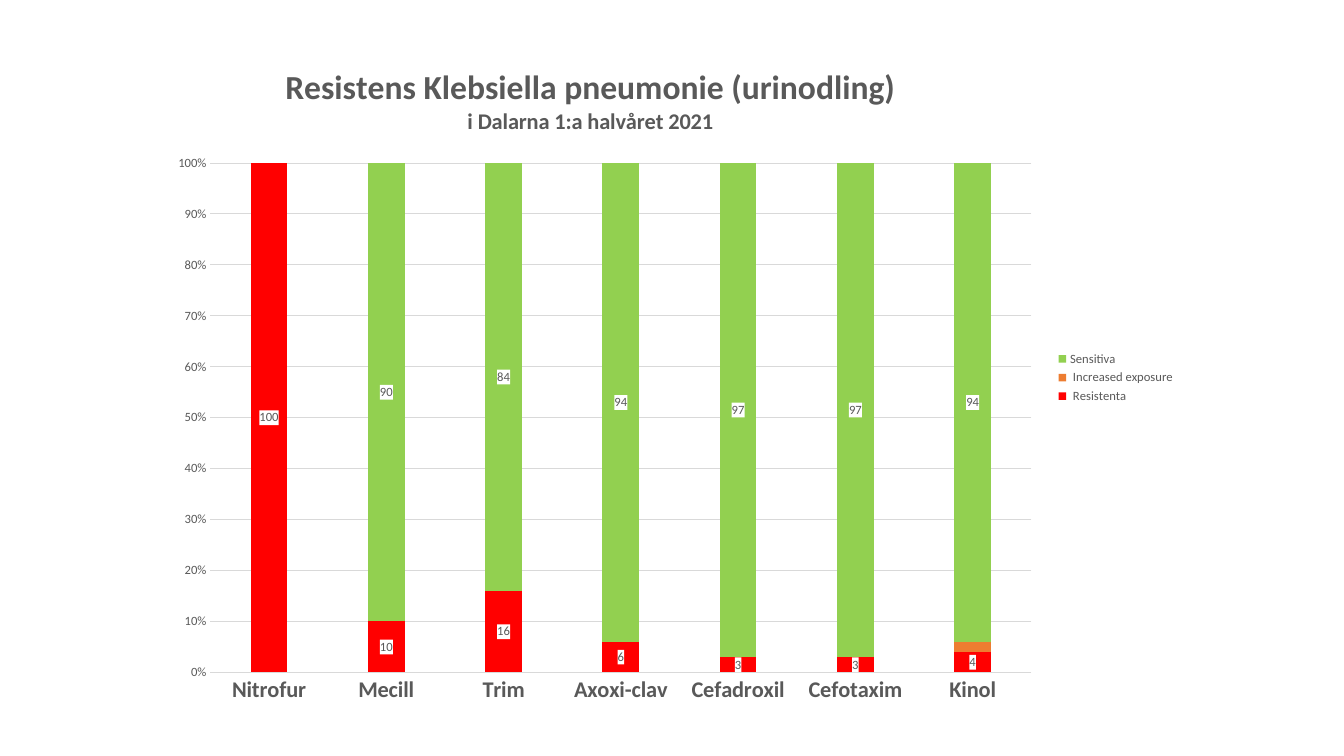
from lxml.etree import SubElement
from pptx import Presentation
from pptx.chart.data import CategoryChartData
from pptx.dml.color import RGBColor
from pptx.enum.chart import XL_CHART_TYPE, XL_LEGEND_POSITION, XL_TICK_MARK
from pptx.oxml import parse_xml
from pptx.oxml.ns import nsdecls, qn
from pptx.util import Cm, Pt

GREY = "595959"
LINE_GREY = "D9D9D9"


def color(hex_value):
    return RGBColor.from_string(hex_value)


def place(parent, index, **fractions):
    """Give a chart part a manual layout in fractions of the chart size."""
    for old_layout in parent.findall(qn("c:layout")):
        parent.remove(old_layout)
    layout = parse_xml(f"<c:layout {nsdecls('c')}><c:manualLayout/></c:layout>")
    manual = layout[0]
    if "w" in fractions:
        SubElement(manual, qn("c:layoutTarget")).set("val", "inner")
    for mode in ("xMode", "yMode"):
        SubElement(manual, qn(f"c:{mode}")).set("val", "edge")
    for name, value in fractions.items():
        SubElement(manual, qn(f"c:{name}")).set("val", str(value))
    parent.insert(index, layout)


presentation = Presentation()
presentation.slide_width = Cm(33.87)
presentation.slide_height = Cm(19.05)
slide = presentation.slides.add_slide(presentation.slide_layouts[6])

# Resistance data, from the bottom of the stack to the top
series_values = {
    " Resistenta": ("FF0000", [100, 10, 16, 6, 3, 3, 4]),
    " Increased exposure": ("ED7D31", [0, 0, 0, 0, 0, 0, 2]),
    "Sensitiva ": ("92D050", [0, 90, 84, 94, 97, 97, 94]),
}
chart_data = CategoryChartData()
chart_data.categories = ["Nitrofur", "Mecill", "Trim", "Axoxi-clav",
                         "Cefadroxil", "Cefotaxim", "Kinol"]
for name, (fill, values) in series_values.items():
    chart_data.add_series(name, values)

# Chart
chart = slide.shapes.add_chart(
    XL_CHART_TYPE.COLUMN_STACKED_100,
    Cm(4.01), Cm(1.07), Cm(25.86), Cm(16.89), chart_data).chart
chart.font.name = "Calibri"
chart.font.size = Pt(10)
plot = chart.plots[0]
plot.gap_width = 219
plot.overlap = 100
plot.vary_by_categories = False
place(plot._element.getparent(), 0, x=0.05, y=0.18, w=0.8, h=0.76)

# Title
title_frame = chart.chart_title.text_frame
title_lines = [("Resistens Klebsiella pneumonie (urinodling)", 24),
               ("i Dalarna 1:a halvåret 2021", 16)]
title_fonts = []
for number, (text, size) in enumerate(title_lines):
    paragraph = title_frame.add_paragraph() if number else title_frame.paragraphs[0]
    run = paragraph.add_run()
    run.text = text
    title_fonts.append((run.font, size, True))
chart.chart_title.include_in_layout = False
place(chart.chart_title._element, 1, x=0.12, y=0.03)

# Axes
category_axis = chart.category_axis
value_axis = chart.value_axis
for axis in (category_axis, value_axis):
    axis.major_tick_mark = XL_TICK_MARK.NONE
    axis.minor_tick_mark = XL_TICK_MARK.NONE
value_axis.minimum_scale = 0
value_axis.maximum_scale = 1
value_axis.major_unit = 0.1
value_axis.tick_labels.number_format = "0%"
value_axis.tick_labels.number_format_is_linked = False
value_axis.format.line.fill.background()
for line in (category_axis.format.line, value_axis.major_gridlines.format.line):
    line.color.rgb = color(LINE_GREY)
    line.width = Pt(0.75)

# Legend
chart.has_legend = True
chart.legend.position = XL_LEGEND_POSITION.RIGHT
chart.legend.include_in_layout = False

# Series colours and value labels on white
label_fonts = []
for series in plot.series:
    series.format.fill.solid()
    series.format.fill.fore_color.rgb = color(series_values[series.name][0])
    if series.name == " Increased exposure":
        continue
    labels = series.data_labels
    labels.show_value = True
    label_fonts.append((labels.font, 9, False))
    labels._element.find(qn("c:txPr")).addprevious(parse_xml(
        f'<c:spPr {nsdecls("c", "a")}><a:solidFill><a:srgbClr val="FFFFFF"/>'
        '</a:solidFill></c:spPr>'))
    if series.values[0] == 0:
        labels._element.insert(0, parse_xml(
            f'<c:dLbl {nsdecls("c")}><c:idx val="0"/><c:delete val="1"/></c:dLbl>'))

# Fonts
fonts = title_fonts + label_fonts + [
    (category_axis.tick_labels.font, 16, True),
    (value_axis.tick_labels.font, 9, False),
    (chart.legend.font, 9, False),
]
for font, size, bold in fonts:
    for attribute, value in {"name": "Calibri", "size": Pt(size), "bold": bold}.items():
        setattr(font, attribute, value)
    font.fill.solid()
    font.fill.fore_color.rgb = color(GREY)

presentation.save("out.pptx")
